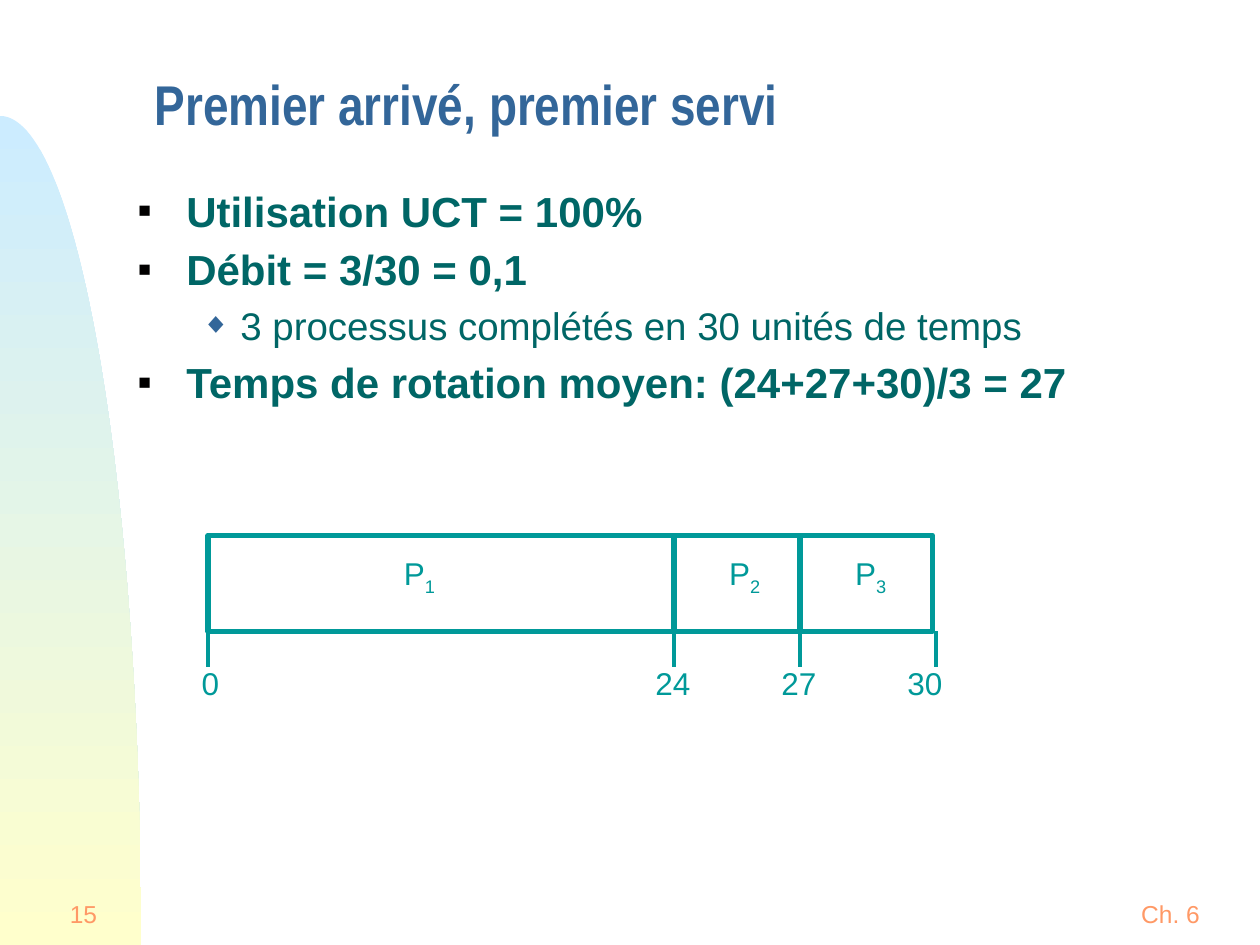
from lxml import etree
from pptx import Presentation
from pptx.dml.color import RGBColor
from pptx.enum.shapes import MSO_CONNECTOR, MSO_SHAPE
from pptx.enum.text import MSO_ANCHOR, PP_ALIGN
from pptx.oxml import parse_xml
from pptx.oxml.ns import qn
from pptx.util import Inches, Pt

LEFT, CENTER, RIGHT = PP_ALIGN.LEFT, PP_ALIGN.CENTER, PP_ALIGN.RIGHT
MIDDLE = MSO_ANCHOR.MIDDLE
STRAIGHT, RECTANGLE = MSO_CONNECTOR.STRAIGHT, MSO_SHAPE.RECTANGLE
A_NS = "http://schemas.openxmlformats.org/drawingml/2006/main"
BLUE, GREEN, TEAL, ORANGE = "336699", "006666", "009999", "FF9966"

color = RGBColor.from_string

prs = Presentation()
prs.slide_width, prs.slide_height = Inches(10), Inches(7.5)
slide = prs.slides.add_slide(prs.slide_layouts[6])
shapes = slide.shapes


def add_text(text, left, top, width, height, size, ink, align=CENTER,
             font="Arial", wrap=False, subscript=""):
    box = shapes.add_textbox(Inches(left), Inches(top), Inches(width), Inches(height))
    frame = box.text_frame
    frame.word_wrap = wrap
    frame.vertical_anchor = MIDDLE
    paragraph = frame.paragraphs[0]
    paragraph.alignment = align
    paragraph.font.size, paragraph.font.name = Pt(size), font
    paragraph.font.color.rgb = color(ink)
    paragraph.add_run().text = text
    if subscript:
        run = paragraph.add_run()
        run.text = subscript
        run.font._element.set("baseline", "-25000")
    return paragraph


def add_line(x, top, bottom, weight):
    line = shapes.add_connector(STRAIGHT, Inches(x), Inches(top), Inches(x), Inches(bottom))
    line.line.color.rgb = color(TEAL)
    line.line.width = Pt(weight)
    etree.SubElement(line._element.spPr, qn("a:effectLst"))


# Curved band on the left: a cubic curve in short steps
curve = [(0, 0.92), (0.62, 0.92), (1.12, 3.87), (1.12, 7.5)]
STEPS = 60
points = []
for step in range(STEPS + 1):
    t = step / STEPS
    weights = [(1 - t) ** 3, 3 * t * (1 - t) ** 2, 3 * t ** 2 * (1 - t), t ** 3]
    points.append(tuple(Inches(sum(w * c[axis] for w, c in zip(weights, curve)))
                        for axis in (0, 1)))
outline = shapes.build_freeform(*points[0])
outline.add_line_segments(points[1:] + [(0, Inches(7.5))], close=True)
band = outline.convert_to_shape()
band.shadow.inherit = False
band.line.fill.background()
band.fill.gradient()
band.fill.gradient_angle = 270
for stop, shade in zip(band.fill.gradient_stops, ("CCECFF", "FFFFCC")):
    stop.color.rgb = color(shade)

# Footer and title
add_text("Ch. 6", 8.83, 7, 0.92, 0.5, 14, ORANGE)
add_text("15", 0.17, 7, 0.7, 0.5, 14, ORANGE, RIGHT)
title = add_text("Premier arrivé, premier servi", 1.13, 0.36, 8.62, 1.05, 32, BLUE,
                 LEFT, "Arial Narrow", wrap=True)
title.font.bold = True
title.line_spacing = 0.7

# Bulleted results
results = [
    (0, "Utilisation UCT = 100%"),
    (0, "Débit = 3/30 = 0,1"),
    (1, "3 processus complétés en 30 unités de temps"),
    (0, "Temps de rotation moyen: (24+27+30)/3 = 27"),
]
# Per level: left margin, hanging indent, bullet, its colour and percent, text size, bold
levels = [
    (0.38, 0.38, "■", "010000", 50, 24, True),
    (0.81, 0.31, "◆", BLUE, 75, 22, False),
]
body = shapes.add_textbox(Inches(1), Inches(1.42), Inches(8.62), Inches(5.21)).text_frame
body.word_wrap = True
for index, (level, text) in enumerate(results):
    margin, hang, bullet, bullet_color, percent, size, bold = levels[level]
    item = body.paragraphs[0] if index == 0 else body.add_paragraph()
    item.text = text
    item.level = level
    props = item._p.get_or_add_pPr()
    props.set("marL", str(Inches(margin)))
    props.set("indent", str(-Inches(hang)))
    for xml in (
        '<a:spcBef xmlns:a="{}"><a:spcPct val="20000"/></a:spcBef>'.format(A_NS),
        f'<a:buClr xmlns:a="{A_NS}"><a:srgbClr val="{bullet_color}"/></a:buClr>',
        f'<a:buSzPct xmlns:a="{A_NS}" val="{percent * 1000}"/>',
        f'<a:buFont xmlns:a="{A_NS}" typeface="Arial"/>',
        f'<a:buChar xmlns:a="{A_NS}" char="{bullet}"/>',
    ):
        props.append(parse_xml(xml))
    item.font.size, item.font.name, item.font.bold = Pt(size), "Arial", bold
    item.font.color.rgb = color(GREEN)

# Gantt bar
BAR_TOP, BAR_BOTTOM, TICK_BOTTOM = 4.25, 5.01, 5.29
bar = shapes.add_shape(RECTANGLE, Inches(1.65), Inches(BAR_TOP),
                       Inches(5.75), Inches(BAR_BOTTOM - BAR_TOP))
bar.shadow.inherit = False
bar.fill.solid()
bar.fill.fore_color.rgb = color("FFFFFF")
bar.line.color.rgb = color(TEAL)
bar.line.width = Pt(3)

for number, left in (("1", 3.1), ("2", 5.68), ("3", 6.68)):
    add_text("P", left, 4.37, 0.46, 0.4, 18, TEAL, subscript=number)

for x in (5.35, 6.35):
    add_line(x, BAR_TOP, BAR_BOTTOM, 3)

# Time scale: tick position, label centre
for time, x, middle in (("0", 1.65, 1.67), ("24", 5.35, 5.34),
                        ("27", 6.35, 6.34), ("30", 7.43, 7.34)):
    add_line(x, BAR_BOTTOM, TICK_BOTTOM, 2.25)
    add_text(time, middle - 0.24, 5.22, 0.48, 0.4, 18, TEAL)

prs.save("out.pptx")
